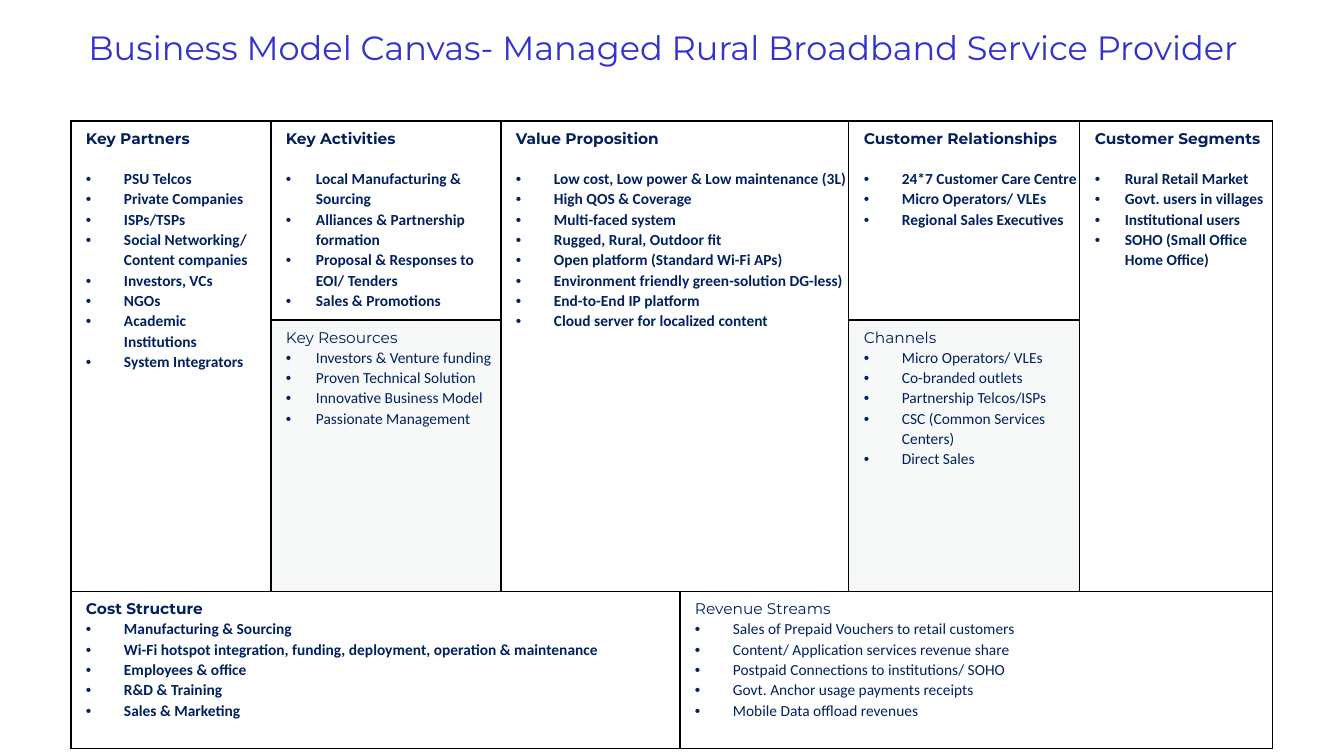
import pptx
import pptx.util
import pptx.dml.color
import pptx.enum.text
import pptx.oxml
import pptx.oxml.ns

PX = 9144000 / 1008  # EMU per px, 100.8 px to the inch
HEADING_FONT, BODY_FONT = "Montserrat", "Calibri"
NAVY, BLUE, BLACK, MIST = "002060", "3333CC", "000000", "D8DEDC"

COLUMNS = [200, 230, 179, 169, 231, 193]
ROWS = [199, 158, 157]

# row, column, last row, last column, heading, items, format
BLOCKS = [
    (0, 0, 1, 0, "Key Partners",
     ["PSU Telcos", "Private Companies", "ISPs/TSPs",
      "Social Networking/ Content companies", "Investors, VCs", "NGOs",
      "Academic Institutions", "System Integrators"],
     dict(gap=14.5, right=22, bottom=27)),
    (0, 1, 0, 1, "Key Activities",
     ["Local Manufacturing & Sourcing", "Alliances & Partnership formation",
      "Proposal & Responses to EOI/ Tenders", "Sales & Promotions"],
     dict(gap=14.5, indent=30)),
    (0, 2, 1, 3, "Value Proposition",
     ["Low cost, Low power & Low maintenance (3L)", "High QOS & Coverage",
      "Multi-faced system", "Rugged, Rural, Outdoor fit",
      "Open platform (Standard Wi-Fi APs)",
      "Environment friendly green-solution DG-less)",
      "End-to-End IP platform", "Cloud server for localized content"],
     dict(gap=14.5)),
    (0, 4, 0, 4, "Customer Relationships",
     ["24*7 Customer Care Centre", "Micro Operators/ VLEs",
      "Regional Sales Executives"],
     dict(gap=14.5)),
    (0, 5, 1, 5, "Customer Segments",
     ["Rural Retail Market", "Govt. users in villages",
      "Institutional users", "SOHO (Small Office Home Office)"],
     dict(gap=14.5, indent=30)),
    (1, 1, 1, 1, "Key Resources",
     ["Investors & Venture funding", "Proven Technical Solution",
      "Innovative Business Model", "Passionate Management"],
     dict(indent=30, bold=False, shade=MIST)),
    (1, 4, 1, 4, "Channels",
     ["Micro Operators/ VLEs", "Co-branded outlets",
      "Partnership Telcos/ISPs", "CSC (Common Services Centers)",
      "Direct Sales"],
     dict(bold=False, shade=MIST)),
    (2, 0, 2, 2, "Cost Structure",
     ["Manufacturing & Sourcing",
      "Wi-Fi hotspot integration, funding, deployment, operation & maintenance",
      "Employees & office", "R&D & Training", "Sales & Marketing"],
     dict(right=22)),
    (2, 3, 2, 5, "Revenue Streams",
     ["Sales of Prepaid Vouchers to retail customers",
      "Content/ Application services revenue share",
      "Postpaid Connections to institutions/ SOHO",
      "Govt. Anchor usage payments receipts",
      "Mobile Data offload revenues"],
     dict(bold=False)),
]


def px(length):
    return pptx.util.Emu(round(length * PX))


def rgb(value):
    return pptx.dml.color.RGBColor.from_string(value)


def xml(markup):
    """Parse one DrawingML element whose tag ends in {ns}."""
    return pptx.oxml.parse_xml(markup.format(ns=pptx.oxml.ns.nsdecls("a")))


def write(paragraph, text, *, size=11, font=BODY_FONT, color=NAVY, bold=False,
          align=pptx.enum.text.PP_ALIGN.LEFT, spacing=1.07, after=0, indent=0):
    """Fill a paragraph; an indent makes it a bulleted item."""
    paragraph.alignment = align
    paragraph.line_spacing = spacing
    paragraph.space_before = pptx.util.Pt(0)
    paragraph.space_after = pptx.util.Pt(after)
    if indent:
        properties = paragraph._p.get_or_add_pPr()
        properties.set("marL", str(px(indent)))
        properties.set("indent", str(-px(indent)))
        properties.append(xml('<a:buFont {ns} typeface="Arial"/>'))
        properties.append(xml('<a:buChar {ns} char="•"/>'))
    run = paragraph.add_run()
    run.text = text
    run.font.size = pptx.util.Pt(size)
    run.font.name = font
    run.font.bold = bold
    run.font.color.rgb = rgb(color)


class Canvas:
    def __init__(self, slide):
        self.slide = slide

    def title(self, text):
        heading = self.slide.shapes.title
        heading.left, heading.top = px(0), px(22)
        heading.width, heading.height = px(1326), px(50)
        frame = heading.text_frame
        frame.word_wrap = True
        frame.auto_size = pptx.enum.text.MSO_AUTO_SIZE.SHAPE_TO_FIT_TEXT
        frame.vertical_anchor = pptx.enum.text.MSO_ANCHOR.TOP
        write(frame.paragraphs[0], text, size=24, font=HEADING_FONT, color=BLUE,
              align=pptx.enum.text.PP_ALIGN.CENTER, spacing=1.0)

    def grid(self, left, top, columns, rows):
        table = self.slide.shapes.add_table(
            len(rows), len(columns), px(left), px(top),
            px(sum(columns)), px(sum(rows))).table
        table.first_row = table.horz_banding = False
        for column, width in zip(table.columns, columns):
            column.width = px(width)
        for row, height in zip(table.rows, rows):
            row.height = px(height)
        for cell in table.iter_cells():
            cell.fill.background()
            self.border(cell)
        return table

    def border(self, cell):
        properties = cell._tc.get_or_add_tcPr()
        for position, side in enumerate("LRTB"):
            properties.insert(position, xml(
                f'<a:ln{side} {{ns}} w="12700"><a:solidFill>'
                f'<a:srgbClr val="{BLACK}"/></a:solidFill></a:ln{side}>'))

    def block(self, cell, heading, items, *, gap=0, indent=38, right=1,
              bottom=7, bold=True, shade=None):
        cell.margin_left, cell.margin_right = px(15), px(right)
        cell.margin_top, cell.margin_bottom = px(7), px(bottom)
        if shade:
            cell.fill.solid()
            cell.fill.fore_color.rgb = rgb(shade)
            tint = cell._tc.tcPr.find(
                "a:solidFill/a:srgbClr", pptx.oxml.ns._nsmap)
            tint.append(xml('<a:alpha {ns} val="20000"/>'))
        frame = cell.text_frame
        write(frame.paragraphs[0], heading, font=HEADING_FONT, bold=bold,
              after=gap)
        for item in items:
            write(frame.add_paragraph(), item, bold=bold, indent=indent)


def main():
    deck = pptx.Presentation()
    deck.slide_width, deck.slide_height = px(1344), px(756)
    canvas = Canvas(deck.slides.add_slide(deck.slide_layouts[5]))
    business_model = canvas.grid(71, 121, COLUMNS, ROWS)
    for row, column, last_row, last_column, heading, items, style in BLOCKS:
        cell = business_model.cell(row, column)
        if (row, column) != (last_row, last_column):
            cell.merge(business_model.cell(last_row, last_column))
        canvas.block(cell, heading, items, **style)
    canvas.title("Business Model Canvas- Managed Rural Broadband Service Provider")
    deck.save("out.pptx")


if __name__ == "__main__":
    main()
